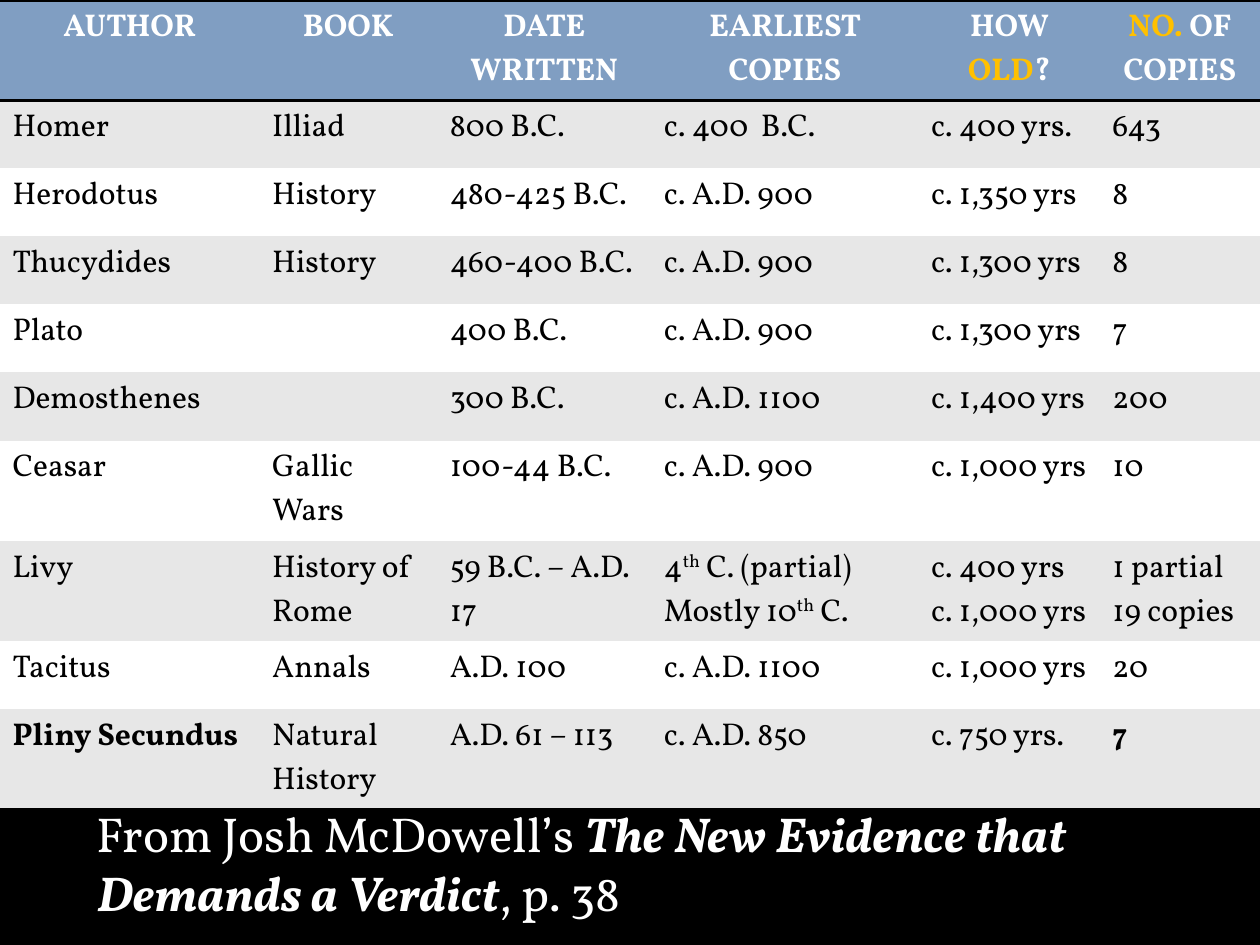
from dataclasses import dataclass

from lxml.etree import SubElement
from pptx import Presentation
from pptx.dml.color import RGBColor as RGB
from pptx.enum.text import MSO_AUTO_SIZE as AutoSize, PP_ALIGN as Align
from pptx.oxml.ns import qn
from pptx.util import Inches, Pt


@dataclass(frozen=True)
class Theme:
    font: str = "Vollkorn"
    table_size: int = 18
    caption_size: int = 28
    black: str = "000000"
    white: str = "FFFFFF"
    header: str = "809EC2"
    band: str = "E7E7E7"
    accent: str = "FFC000"
    rule: int = 2
    no_style: str = "{2D5ABB26-0587-4C30-8999-92F81FD0307C}"


THEME = Theme()
ACCENT = {"color": THEME.accent}
SUPER = {"baseline": 30}
BOLD = {"bold": True}
TITLE = {"bold": True, "italic": True}

COLUMNS = [2.06, 1.41, 1.7, 2.12, 1.44, 1.27]
ROWS = [0.79] + [0.54] * 5 + [0.73, 0.79, 0.54, 0.79]

# A cell is a list of paragraphs; a paragraph is a string or a list of runs;
# a run is a string or a (text, format) pair. A bare string is one paragraph.
HEADINGS = ["AUTHOR", "BOOK", ["DATE", "WRITTEN"], "EARLIEST COPIES",
            [["HOW ", ("OLD", ACCENT), "?"]],
            [[("NO. ", ACCENT), "OF COPIES"]]]
MANUSCRIPTS = [
    ["Homer", "Illiad", "800 B.C.", "c. 400  B.C.", "c. 400 yrs.", "643"],
    ["Herodotus", "History", "480-425 B.C.", "c. A.D. 900", "c. 1,350 yrs", "8"],
    ["Thucydides", "History", "460-400 B.C.", "c. A.D. 900", "c. 1,300 yrs", "8"],
    ["Plato", "", "400 B.C.", "c. A.D. 900", "c. 1,300 yrs", "7"],
    ["Demosthenes", "", "300 B.C.", "c. A.D. 1100", "c. 1,400 yrs", "200"],
    ["Ceasar", "Gallic Wars", "100-44 B.C.", "c. A.D. 900", "c. 1,000 yrs", "10"],
    ["Livy", "History of Rome", "59 B.C. – A.D. 17",
     [["4", ("th", SUPER), " C. (partial)"], ["Mostly 10", ("th", SUPER), " C."]],
     ["c. 400 yrs", "c. 1,000 yrs"], ["1 partial", "19 copies"]],
    ["Tacitus", "Annals", "A.D. 100", "c. A.D. 1100", "c. 1,000 yrs", "20"],
    [[[("Pliny Secundus", BOLD)]], "Natural History", "A.D. 61 – 113",
     "c. A.D. 850", "c. 750 yrs.", [[("7", BOLD)]]],
]
CAPTION = [["From Josh McDowell’s ",
            ("The New Evidence that Demands a Verdict", TITLE), ", p. 38"]]


def add_run(p, text, size, color, bold=False, italic=False, baseline=0):
    r = p.add_run()
    r.text = text
    f = r.font
    f.name, f.size, f.bold, f.italic = THEME.font, Pt(size), bold, italic
    f.color.rgb = RGB.from_string(color)
    if baseline:
        f._element.set("baseline", str(baseline * 1000))


def write(tf, content, align=Align.LEFT, **style):
    """Fill a text frame; a run's own format overrides the shared style."""
    paragraphs = [content] if isinstance(content, str) else content
    for i, runs in enumerate(paragraphs):
        p = tf.paragraphs[0] if i == 0 else tf.add_paragraph()
        p.alignment = align
        for run in [runs] if isinstance(runs, str) else runs:
            text, own = (run, {}) if isinstance(run, str) else run
            if text:
                add_run(p, text, **{**style, **own})


def add_border(cell, side):
    ln = SubElement(cell._tc.get_or_add_tcPr(), qn(f"a:ln{side}"),
                    w=str(Pt(THEME.rule)))
    SubElement(SubElement(ln, qn("a:solidFill")), qn("a:srgbClr"), val=THEME.black)


class SlideBuilder:
    def __init__(self, slide, theme):
        self.s, self.theme = slide, theme

    def background(self, color):
        fill = self.s.background.fill
        fill.solid()
        fill.fore_color.rgb = RGB.from_string(color)

    def cell(self, cell, content, fill, borders="", **style):
        for side in borders:
            add_border(cell, side)
        cell.fill.solid()
        cell.fill.fore_color.rgb = RGB.from_string(fill)
        write(cell.text_frame, content, size=self.theme.table_size, **style)

    def table(self, left, top, columns, heights, headings, records):
        t = self.theme
        table = self.s.shapes.add_table(
            len(heights), len(columns), Inches(left), Inches(top),
            Inches(sum(columns)), Inches(sum(heights))).table
        table.horz_banding = False
        table._tbl.tblPr.find(qn("a:tableStyleId")).text = t.no_style
        for column, width in zip(table.columns, columns):
            column.width = Inches(width)
        for row, height in zip(table.rows, heights):
            row.height = Inches(height)
        for c, heading in enumerate(headings):
            self.cell(table.cell(0, c), heading, t.header, "TB",
                      align=Align.CENTER, color=t.white, bold=True)
        for r, record in enumerate(records, 1):
            for c, content in enumerate(record):
                self.cell(table.cell(r, c), content, t.band if r % 2 else t.white,
                          "B" if r == len(records) else "", color=t.black)

    def caption(self, left, top, width, height, content):
        tf = self.s.shapes.add_textbox(
            Inches(left), Inches(top), Inches(width), Inches(height)).text_frame
        tf.word_wrap = True
        tf.auto_size = AutoSize.SHAPE_TO_FIT_TEXT
        write(tf, content, size=self.theme.caption_size, color=self.theme.white)
        p = tf.paragraphs[0]
        p.level = 1
        pPr = p._p.get_or_add_pPr()
        pPr.set("marL", str(Inches(0.5)))
        pPr.set("indent", "0")


def main():
    prs = Presentation()
    prs.slide_width, prs.slide_height = Inches(10), Inches(7.5)
    builder = SlideBuilder(prs.slides.add_slide(prs.slide_layouts[6]), THEME)
    builder.background(THEME.black)
    builder.table(0, 0, COLUMNS, ROWS, HEADINGS, MANUSCRIPTS)
    builder.caption(0.17, 6.33, 9.67, 1.04, CAPTION)
    prs.save("out.pptx")


if __name__ == "__main__":
    main()
